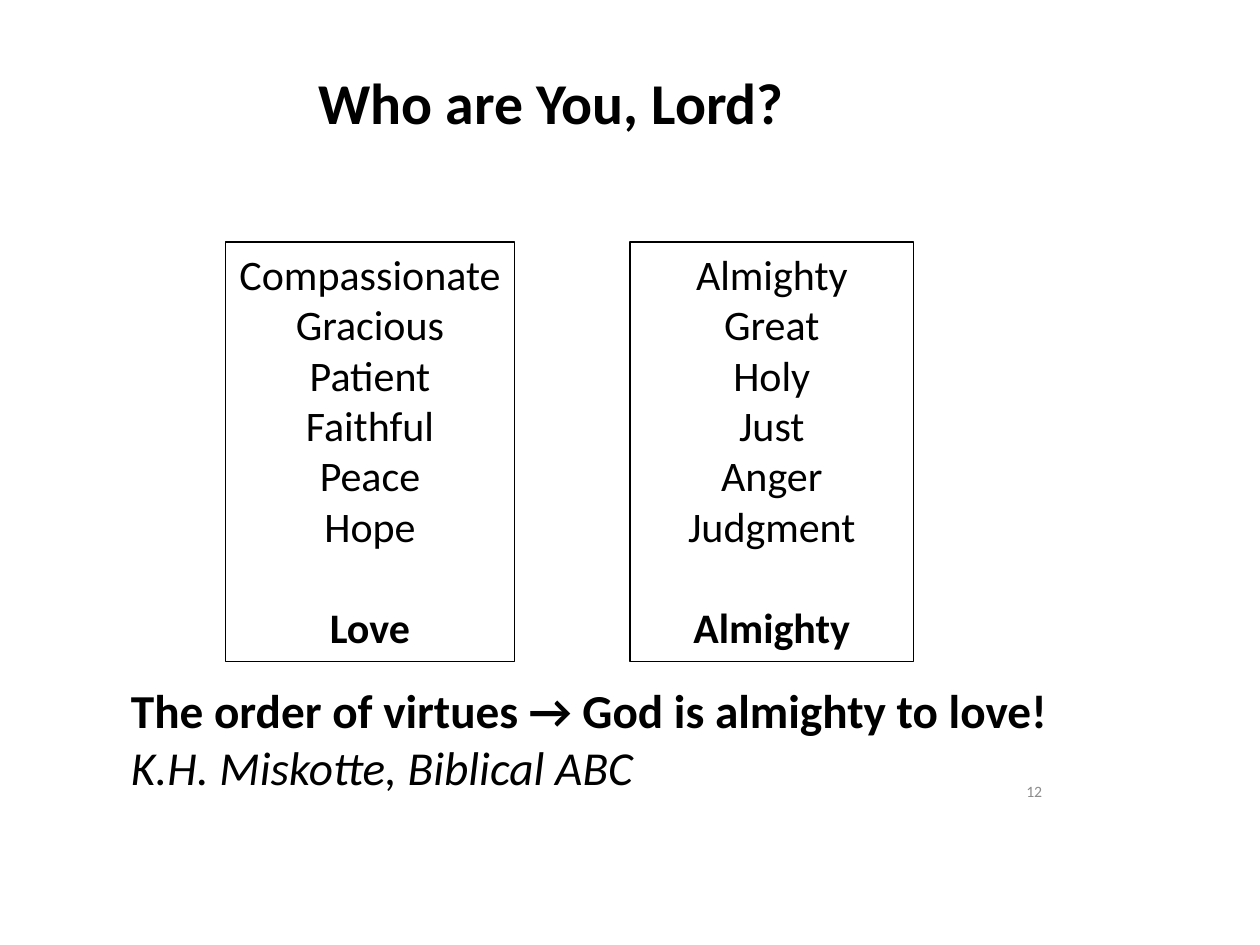
"""Build the slide 'Who are You, Lord?' with two lists of virtues and a conclusion."""
from dataclasses import dataclass

from pptx import Presentation
from pptx.dml.color import RGBColor
from pptx.enum.shapes import MSO_SHAPE
from pptx.enum.text import MSO_ANCHOR, PP_ALIGN
from pptx.slide import Slide
from pptx.text.text import TextFrame
from pptx.util import Cm, Pt

BLACK = RGBColor(0x00, 0x00, 0x00)
GREY = RGBColor(0x8C, 0x8C, 0x8C)
FONT = "Calibri"
BOX_TOP, BOX_HEIGHT = Cm(4.88), Cm(8.46)
EMPTY_LINE = Pt(29)


@dataclass
class Line:
    text: str
    size: float
    align: PP_ALIGN = PP_ALIGN.LEFT
    bold: bool = False
    italic: bool = False
    color: RGBColor = BLACK


@dataclass
class VirtueBox:
    left: Cm
    width: Cm
    virtues: list[str]
    summary: str


VIRTUE_BOXES = [
    VirtueBox(Cm(4.55), Cm(5.82),
              ["Compassionate", "Gracious", "Patient", "Faithful", "Peace", "Hope"], "Love"),
    VirtueBox(Cm(12.7), Cm(5.72),
              ["Almighty", "Great", "Holy", "Just", "Anger", "Judgment"], "Almighty"),
]


def write_lines(frame: TextFrame, lines: list[Line]) -> None:
    for index, line in enumerate(lines):
        paragraph = frame.add_paragraph() if index else frame.paragraphs[0]
        paragraph.text = line.text
        paragraph.alignment = line.align
        font = paragraph.font
        font.name, font.size = FONT, Pt(line.size)
        font.bold, font.italic = line.bold, line.italic
        font.color.rgb = line.color


def add_title(slide: Slide, text: str) -> None:
    title = slide.shapes.title
    title.left, title.top, title.width, title.height = Cm(2.54), Cm(0.84), Cm(17.15), Cm(2.39)
    title.text_frame.vertical_anchor = MSO_ANCHOR.MIDDLE
    write_lines(title.text_frame, [Line(text, 33, PP_ALIGN.CENTER, bold=True)])


def add_virtue_box(slide: Slide, box: VirtueBox) -> None:
    shape = slide.shapes.add_shape(MSO_SHAPE.RECTANGLE, box.left, BOX_TOP, box.width, BOX_HEIGHT)
    shape.shadow.inherit = False
    shape.fill.background()
    shape.line.color.rgb = BLACK
    shape.line.width = Pt(0.75)
    frame = shape.text_frame
    frame.word_wrap = False
    frame.vertical_anchor = MSO_ANCHOR.TOP
    lines = [Line(virtue, 24, PP_ALIGN.CENTER) for virtue in box.virtues]
    write_lines(frame, lines + [Line(box.summary, 24, PP_ALIGN.CENTER, bold=True)])
    frame.paragraphs[-1].space_before = EMPTY_LINE


def add_text(slide: Slide, left: Cm, top: Cm, width: Cm, height: Cm,
             lines: list[Line], anchor: MSO_ANCHOR = MSO_ANCHOR.TOP) -> None:
    frame = slide.shapes.add_textbox(left, top, width, height).text_frame
    frame.word_wrap = True
    frame.vertical_anchor = anchor
    write_lines(frame, lines)


def main() -> None:
    presentation = Presentation()
    presentation.slide_width, presentation.slide_height = Cm(25.4), Cm(19.05)
    slide = presentation.slides.add_slide(presentation.slide_layouts[5])
    add_title(slide, "Who are You, Lord?")
    add_text(slide, Cm(16.81), Cm(15.57), Cm(4.45), Cm(0.76),
             [Line("12", 9, PP_ALIGN.RIGHT, color=GREY)], MSO_ANCHOR.MIDDLE)
    for box in VIRTUE_BOXES:
        add_virtue_box(slide, box)
    add_text(slide, Cm(2.39), Cm(13.61), Cm(19.25), Cm(2.57), [
        Line("The order of virtues → God is almighty to love!", 27, bold=True),
        Line("K.H. Miskotte, Biblical ABC", 27, italic=True),
    ])
    presentation.save("out.pptx")


if __name__ == "__main__":
    main()
